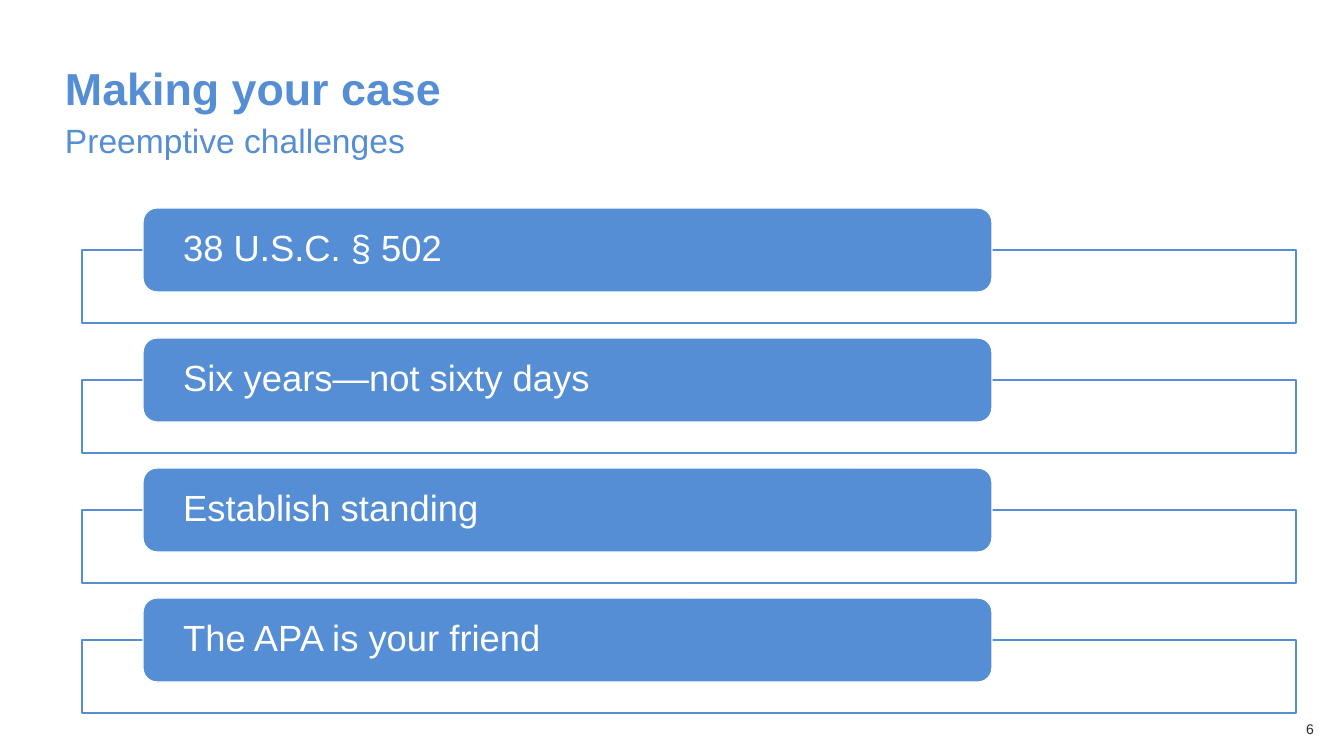
from pptx import Presentation
from pptx.dml.color import RGBColor
from pptx.enum.shapes import MSO_SHAPE as Shape
from pptx.enum.text import MSO_ANCHOR as Anchor, PP_ALIGN as Align
from pptx.util import Pt

PX = 914400 / 100.8
HUES = {"blue": "558ED5", "white": "FFFFFF", "ink": "2A2A2A"}
CASES = ["38 U.S.C. § 502", "Six years—not sixty days",
         "Establish standing", "The APA is your friend"]


def emu(*sizes):
    """Turn px lengths into EMU."""
    return [round(size * PX) for size in sizes]


def hue(name):
    """Return a named colour."""
    return RGBColor.from_string(HUES[name])


def write(shape, words, size, tint, pad=(10, 5), bold=False,
          lead=1.0, align=Align.LEFT, anchor=Anchor.MIDDLE):
    """Set one styled paragraph in a shape."""
    frame = shape.text_frame
    frame.word_wrap = True
    frame.vertical_anchor = anchor
    frame.margin_left, frame.margin_top = emu(*pad)
    frame.margin_right, frame.margin_bottom = emu(*pad)
    para = frame.paragraphs[0]
    para.text = words
    para.alignment = align
    para.line_spacing = lead
    font = para.font
    font.name, font.size, font.bold = "Arial", Pt(size), bold
    font.color.rgb = hue(tint)


def block(slide, kind, box, fill, line):
    """Draw a filled and outlined shape."""
    shape = slide.shapes.add_shape(kind, *emu(*box))
    shape.shadow.inherit = False
    shape.fill.solid()
    shape.fill.fore_color.rgb = hue(fill)
    shape.line.color.rgb = hue(line)
    shape.line.width = Pt(1)
    return shape


def header(slide, left, top, width):
    """Place the title and the subtitle below it."""
    sub = slide.shapes.add_textbox(*emu(left, top + 53, width, 55))
    write(sub, "Preemptive challenges", 24, "blue", lead=1.1, anchor=Anchor.TOP)
    title = slide.shapes.add_textbox(*emu(left, top, width, 67))
    write(title, "Making your case", 32, "blue", bold=True, lead=0.9)


def cases(slide, left, top, width, step):
    """Stack the labelled frames at equal steps."""
    for row, words in enumerate(CASES):
        y = top + row * step
        block(slide, Shape.RECTANGLE, (left, y + 42, width, 73), "white", "blue")
        pill = block(slide, Shape.ROUNDED_RECTANGLE,
                     (left + 61, y, width * 7 // 10, 84), "blue", "white")
        write(pill, words, 26, "white", pad=(36, 0), lead=0.9)


def folio(slide, left, top, width, height):
    """Place the page number."""
    box = slide.shapes.add_textbox(*emu(left, top, width, height))
    write(box, "6", 10, "ink", align=Align.CENTER, anchor=Anchor.TOP)


def main():
    """Build and save the slide."""
    deck = Presentation()
    deck.slide_width, deck.slide_height = emu(1344, 756)
    slide = deck.slides.add_slide(deck.slide_layouts[6])
    folio(slide, 1277, 716, 66, 40)
    header(slide, 55, 58, 1222)
    cases(slide, 82, 208, 1214, 130)
    deck.save("out.pptx")


if __name__ == "__main__":
    main()
